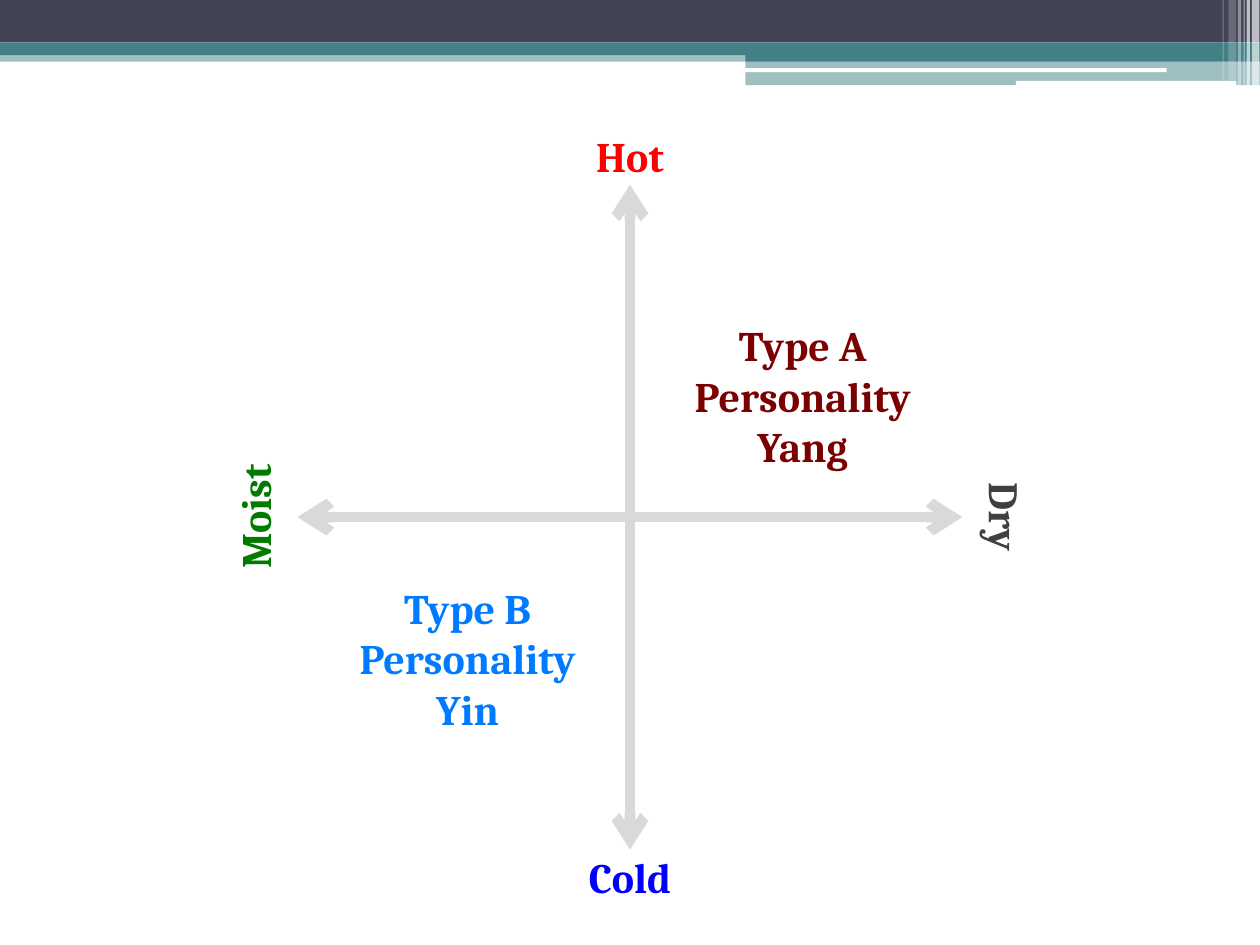
from dataclasses import dataclass

from lxml import etree
from pptx import Presentation
from pptx import util as u
from pptx.dml.color import RGBColor
from pptx.enum import shapes, text
from pptx.oxml import ns

COLORS = {
    "navy": "424456", "teal": "438086", "white": "FFFFFF", "axis": "D9D9D9",
    "hot": "FF0000", "cold": "0000FF", "moist": "007B00", "dry": "404040",
    "yang": "7B0000", "yin": "007BFF",
}
FONT = "Cambria"


@dataclass
class Band:
    left: float
    top: float
    width: float
    height: float
    color: str
    opacity: int = 100
    rounded: bool = False


@dataclass
class Label:
    left: float
    top: float
    width: float
    height: float
    words: str
    color: str
    direction: str = "horz"


@dataclass
class Axis:
    x1: float
    y1: float
    x2: float
    y2: float


# Header bands, then the white stripes at the right edge
BANDS = [
    Band(0, 28.8, 720, 6.5, "teal", 50),
    Band(0, 0, 720, 24.3, "navy"),
    Band(0, 24.3, 720, 7.2, "teal"),
    Band(426, 28.1, 294, 7.2, "teal"),
    Band(426, 35.3, 294, 13.4, "teal", 50),
    Band(425.5, 39, 241.2, 2.2, "white", rounded=True),
    Band(580.5, 46.3, 126, 2.9, "white", rounded=True),
]
STRIPES = [  # left, width, height, opacity
    (715.4, 4.3, 49, 65), (712.3, 2, 49, 65), (710.6, 0.7, 49, 60),
    (707.3, 2, 49, 40), (702, 4.3, 46, 20), (698.6, 0.7, 46, 30),
]
BANDS += [Band(left, 0, width, height, "white", opacity)
          for left, width, height, opacity in STRIPES]

# Axes cross at the centre and reach equally far in each direction
CENTER_X, CENTER_Y, REACH = 360, 295.5, 190
AXES = [
    Axis(CENTER_X, CENTER_Y - REACH, CENTER_X, CENTER_Y + REACH),
    Axis(CENTER_X + REACH, CENTER_Y, CENTER_X - REACH, CENTER_Y),
]

LABELS = [
    Label(127.4, 252.7, 44, 85, "Moist", "moist", "vert270"),
    Label(328.7, 71.3, 62.6, 36, "Hot", "hot"),
    Label(548.6, 207.4, 44, 175.7, "Dry", "dry", "vert"),
    Label(317.5, 483.1, 85, 36, "Cold", "cold"),
    Label(387, 179.3, 143.3, 94.3, "Type A\vPersonality\nYang", "yang"),
    Label(195.5, 329.2, 143.3, 94.3, "Type B\nPersonality\nYin", "yin"),
]


def rgb(name: str) -> RGBColor:
    return RGBColor.from_string(COLORS[name])


def draw_band(page, band: Band) -> None:
    kind = shapes.MSO_SHAPE.ROUNDED_RECTANGLE if band.rounded else shapes.MSO_SHAPE.RECTANGLE
    shape = page.shapes.add_shape(kind, u.Pt(band.left), u.Pt(band.top),
                                  u.Pt(band.width), u.Pt(band.height))
    shape.shadow.inherit = False
    shape.line.fill.background()
    shape.fill.solid()
    shape.fill.fore_color.rgb = rgb(band.color)
    if band.opacity < 100:
        color = shape.fill._xPr.find(".//" + ns.qn("a:srgbClr"))
        etree.SubElement(color, ns.qn("a:alpha"), val=str(band.opacity * 1000))


def draw_axis(page, axis: Axis) -> None:
    line = page.shapes.add_connector(
        shapes.MSO_CONNECTOR.STRAIGHT,
        u.Pt(axis.x1), u.Pt(axis.y1), u.Pt(axis.x2), u.Pt(axis.y2))
    line.line.color.rgb = rgb("axis")
    line.line.width = u.Pt(6)
    for end in ("a:headEnd", "a:tailEnd"):
        etree.SubElement(line.line._get_or_add_ln(), ns.qn(end), type="arrow")
    etree.SubElement(line._element.spPr, ns.qn("a:effectLst"))


def draw_label(page, label: Label) -> None:
    box = page.shapes.add_textbox(u.Pt(label.left), u.Pt(label.top),
                                  u.Pt(label.width), u.Pt(label.height))
    frame = box.text_frame
    frame.word_wrap = True
    frame.auto_size = text.MSO_AUTO_SIZE.SHAPE_TO_FIT_TEXT
    frame._txBody.bodyPr.set("vert", label.direction)
    frame.text = label.words
    for para in frame.paragraphs:
        para.alignment = text.PP_ALIGN.CENTER
        for span in para.runs:
            span.font.name = FONT
            span.font.size = u.Pt(24)
            span.font.bold = True
            span.font.color.rgb = rgb(label.color)


def main() -> None:
    deck = Presentation()
    deck.slide_width, deck.slide_height = u.Pt(720), u.Pt(540)
    page = deck.slides.add_slide(deck.slide_layouts[6])
    for band in BANDS:
        draw_band(page, band)
    for axis in AXES:
        draw_axis(page, axis)
    for label in LABELS:
        draw_label(page, label)
    deck.save("out.pptx")


if __name__ == "__main__":
    main()
